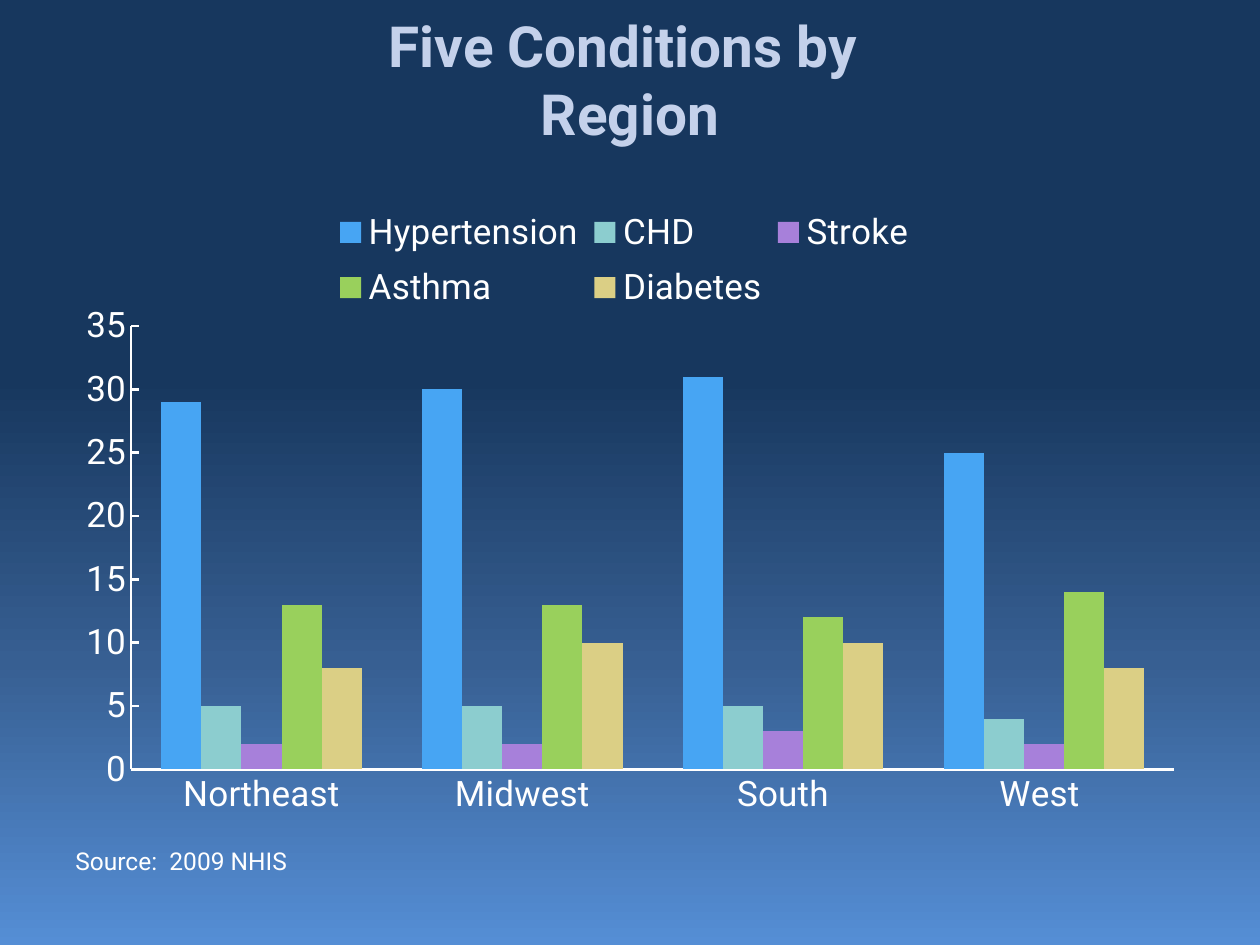
"""Build the slide that compares five health conditions across four regions."""
from dataclasses import dataclass

import pptx
import pptx.chart.axis
import pptx.chart.data
import pptx.dml.color
import pptx.enum.chart
import pptx.enum.text
import pptx.oxml
import pptx.oxml.ns
import pptx.util
from lxml import etree


@dataclass(frozen=True)
class Theme:
    font: str = "Roboto"
    chart_font: str = "Calibri"
    text: str = "FFFFFF"
    title: str = "C4D1EB"
    backdrop: tuple = ((0, "17375E"), (40, "17375E"), (70, "375F92"), (100, "558ED5"))
    title_size: float = 32.4
    label_size: float = 20
    chart_size: float = 18
    source_size: float = 14
    axis_width: float = 1.5


@dataclass(frozen=True)
class Area:
    left: float
    top: float
    width: float
    height: float


@dataclass(frozen=True)
class Condition:
    name: str
    rates: tuple
    color: str


THEME = Theme()
WIDTH, HEIGHT = pptx.util.Inches(10), pptx.util.Inches(7.5)
TITLE = Area(0.05, 0, 0.9, 0.167)
CHART = Area(0.05, 0.189, 0.9, 0.69)
SOURCE = Area(0.05, 0.889, 0.9, 0.033)
PLOT = Area(0.06, 0.226, 0.92, 0.68)
LEGEND = Area(0.23, 0.03, 0.53, 0.19)
REGIONS = ("Northeast", "Midwest", "South", "West ")
CONDITIONS = (
    Condition("Hypertension", (29, 30, 31, 25), "47A5F3"),
    Condition("CHD", (5, 5, 5, 4), "8CCDCF"),
    Condition("Stroke", (2, 2, 3, 2), "A780DA"),
    Condition("Asthma", (13, 13, 12, 14), "99D05C"),
    Condition("Diabetes", (8, 10, 10, 8), "DBCF85"),
)


def rgb(color: str) -> pptx.dml.color.RGBColor:
    return pptx.dml.color.RGBColor.from_string(color)


def place(area: Area) -> tuple:
    return (int(area.left * WIDTH), int(area.top * HEIGHT),
            int(area.width * WIDTH), int(area.height * HEIGHT))


def style_font(font, size: float, color: str = THEME.text, name: str = THEME.font,
               bold: bool = False) -> None:
    font.size = pptx.util.Pt(size)
    font.name = name
    font.bold = bold
    font.color.rgb = rgb(color)


def paint_background(page) -> None:
    fill = page.background.fill
    fill.gradient()
    fill.gradient_angle = 270
    stops = page.element.find(".//" + pptx.oxml.ns.qn("a:gsLst"))
    for stop in list(stops):
        stops.remove(stop)
    for share, color in THEME.backdrop:
        stop = etree.SubElement(stops, pptx.oxml.ns.qn("a:gs"), pos=str(share * 1000))
        etree.SubElement(stop, pptx.oxml.ns.qn("a:srgbClr"), val=color)


def add_text(page, area: Area, text: str, size: float, color: str,
             align, anchor, bold: bool = False) -> None:
    frame = page.shapes.add_textbox(*place(area)).text_frame
    frame.word_wrap = True
    frame.vertical_anchor = anchor
    frame.text = text
    paragraph = frame.paragraphs[0]
    paragraph.alignment = align
    for span in paragraph.runs:
        style_font(span.font, size, color, bold=bold)


def set_layout(parent, index: int, area: Area, inner: bool = False) -> None:
    for old in parent.findall(pptx.oxml.ns.qn("c:layout")):
        parent.remove(old)
    layout = etree.Element(pptx.oxml.ns.qn("c:layout"))
    manual = etree.SubElement(layout, pptx.oxml.ns.qn("c:manualLayout"))
    settings = [("layoutTarget", "inner")] if inner else []
    settings += [("xMode", "edge"), ("yMode", "edge"), ("x", area.left),
                 ("y", area.top), ("w", area.width), ("h", area.height)]
    for tag, value in settings:
        etree.SubElement(manual, pptx.oxml.ns.qn(f"c:{tag}"), val=str(value))
    parent.insert(index, layout)


def style_axis(axis, tick) -> None:
    axis.has_major_gridlines = False
    axis.major_tick_mark = tick
    axis.minor_tick_mark = pptx.enum.chart.XL_TICK_MARK.NONE
    axis.format.line.color.rgb = rgb(THEME.text)
    axis.format.line.width = pptx.util.Pt(THEME.axis_width)
    style_font(axis.tick_labels.font, THEME.label_size)


def add_conditions_chart(page) -> None:
    data = pptx.chart.data.CategoryChartData()
    data.categories = REGIONS
    for condition in CONDITIONS:
        data.add_series(condition.name, condition.rates)
    chart = page.shapes.add_chart(
        pptx.enum.chart.XL_CHART_TYPE.COLUMN_CLUSTERED, *place(CHART), data).chart
    style_font(chart.font, THEME.chart_size, name=THEME.chart_font)
    chart.has_title = False

    plot = chart.plots[0]
    plot.vary_by_categories = False
    plot.gap_width = 150
    plot.overlap = 0
    for series, condition in zip(plot.series, CONDITIONS):
        series.format.fill.solid()
        series.format.fill.fore_color.rgb = rgb(condition.color)

    style_axis(chart.category_axis, pptx.enum.chart.XL_TICK_MARK.NONE)
    style_axis(chart.value_axis, pptx.enum.chart.XL_TICK_MARK.INSIDE)
    chart.value_axis.minimum_scale = 0
    chart.value_axis.maximum_scale = 35
    chart.value_axis.major_unit = 5

    chart.has_legend = True
    legend = chart.legend
    legend.position = pptx.enum.chart.XL_LEGEND_POSITION.TOP
    legend.include_in_layout = False
    style_font(legend.font, THEME.label_size)
    root = plot.series[0]._element.getroottree().getroot()
    set_layout(root.find(".//" + pptx.oxml.ns.qn("c:plotArea")), 0, PLOT, inner=True)
    set_layout(root.find(".//" + pptx.oxml.ns.qn("c:legend")), 1, LEGEND)


def main() -> None:
    deck = pptx.Presentation()
    deck.slide_width, deck.slide_height = WIDTH, HEIGHT
    page = deck.slides.add_slide(deck.slide_layouts[6])
    paint_background(page)
    align, anchor = pptx.enum.text.PP_ALIGN, pptx.enum.text.MSO_ANCHOR
    add_text(page, TITLE, "Five Conditions by \vRegion", THEME.title_size, THEME.title,
             align.CENTER, anchor.MIDDLE, bold=True)
    add_text(page, SOURCE, "Source:  2009 NHIS", THEME.source_size, THEME.text,
             align.LEFT, anchor.TOP)
    add_conditions_chart(page)
    deck.save("out.pptx")


if __name__ == "__main__":
    main()
